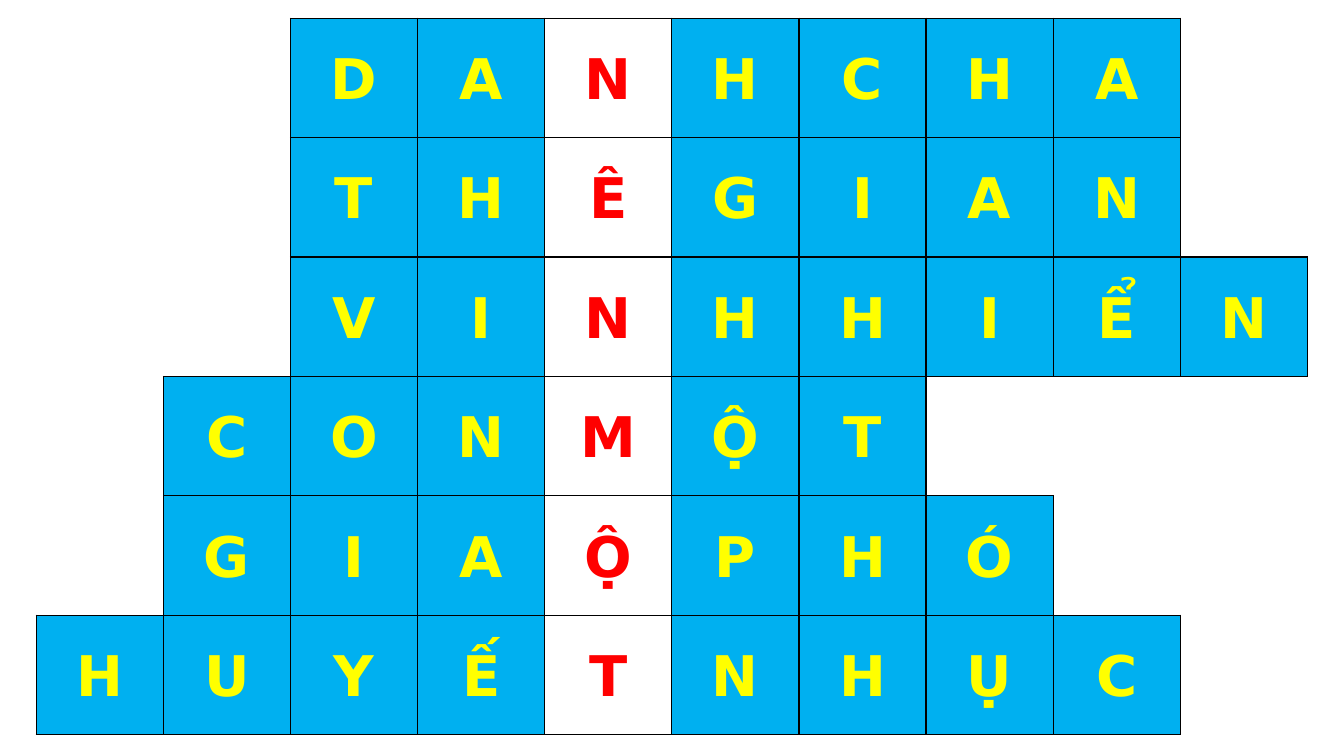
from lxml import etree
from pptx import Presentation
from pptx.dml.color import RGBColor
from pptx.enum.text import MSO_ANCHOR, PP_ALIGN
from pptx.oxml.ns import qn
from pptx.util import Inches, Pt

MIDDLE = MSO_ANCHOR.MIDDLE
CENTER = PP_ALIGN.CENTER
BLUE = RGBColor(0x00, 0xB0, 0xF0)
WHITE = RGBColor(0xFF, 0xFF, 0xFF)
YELLOW = RGBColor(0xFF, 0xFF, 0x00)
RED = RGBColor(0xFF, 0x00, 0x00)
BLACK = RGBColor(0x00, 0x00, 0x00)

COLUMN_COUNT = 10
KEY_COLUMN = 4
# Each answer with the column of its first letter
ANSWERS = [
    (2, "DANHCHA"),
    (2, "THÊGIAN"),
    (2, "VINHHIỂN"),
    (1, "CONMỘT"),
    (1, "GIAỘPHÓ"),
    (0, "HUYẾTNHỤC"),
]
# Border tag with the row and column step to the neighbouring cell
SIDES = [("a:lnL", 0, -1), ("a:lnR", 0, 1), ("a:lnT", -1, 0), ("a:lnB", 1, 0)]


def add_border(cell, tag, visible):
    line = etree.SubElement(cell._tc.get_or_add_tcPr(), qn(tag), w=str(Pt(1)))
    if visible:
        solid = etree.SubElement(line, qn("a:solidFill"))
        etree.SubElement(solid, qn("a:srgbClr"), val=str(BLACK))
    else:
        etree.SubElement(line, qn("a:noFill"))


prs = Presentation()
prs.slide_width = Inches(13.33)
prs.slide_height = Inches(7.5)
slide = prs.slides.add_slide(prs.slide_layouts[6])

crossword = slide.shapes.add_table(
    len(ANSWERS), COLUMN_COUNT,
    Inches(0.36), Inches(0.18), Inches(12.61), Inches(7.11),
).table
crossword.first_row = False
crossword.horz_banding = False

letters = {
    (row, start + offset): letter
    for row, (start, answer) in enumerate(ANSWERS)
    for offset, letter in enumerate(answer)
}

for row in range(len(ANSWERS)):
    for column in range(COLUMN_COUNT):
        cell = crossword.cell(row, column)
        has_letter = (row, column) in letters
        for tag, row_step, column_step in SIDES:
            neighbour = (row + row_step, column + column_step)
            add_border(cell, tag, has_letter or neighbour in letters)
        if not has_letter:
            cell.fill.background()
            continue

        is_key = column == KEY_COLUMN
        cell.fill.solid()
        cell.fill.fore_color.rgb = WHITE if is_key else BLUE
        cell.vertical_anchor = MIDDLE
        cell.margin_left = cell.margin_right = Inches(0.07)
        cell.margin_top = cell.margin_bottom = 0
        paragraph = cell.text_frame.paragraphs[0]
        paragraph.alignment = CENTER
        paragraph.line_spacing = 1.07
        run = paragraph.add_run()
        run.text = letters[row, column]
        run.font.name = "DejaVu Sans"
        run.font.size = Pt(40)
        run.font.bold = True
        run.font.color.rgb = RED if is_key else YELLOW

prs.save("out.pptx")
